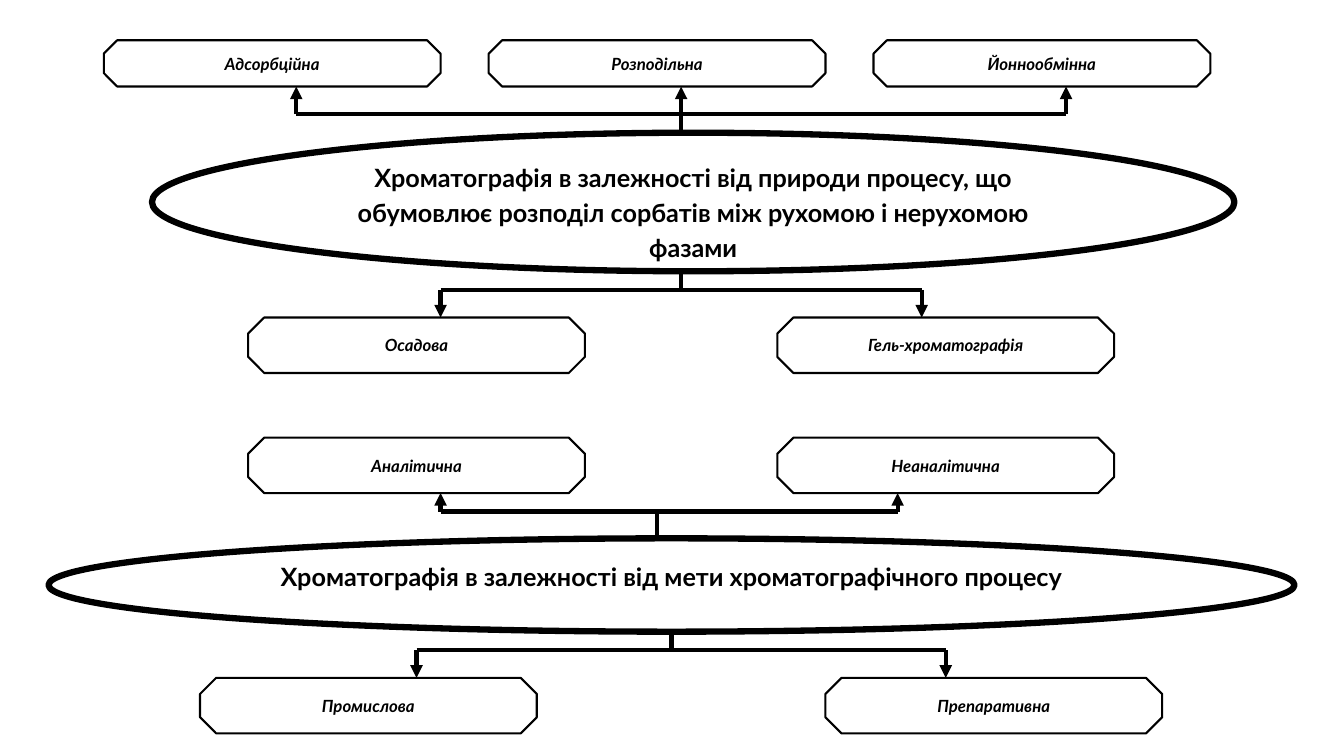
from lxml import etree
from pptx import Presentation
from pptx.dml.color import RGBColor
from pptx.enum.shapes import MSO_CONNECTOR, MSO_SHAPE
from pptx.enum.text import MSO_ANCHOR, PP_ALIGN
from pptx.oxml.ns import qn
from pptx.util import Inches, Pt

ELLIPSE, OCTAGON = MSO_SHAPE.OVAL, MSO_SHAPE.OCTAGON
STRAIGHT = MSO_CONNECTOR.STRAIGHT
TOP, MIDDLE = MSO_ANCHOR.TOP, MSO_ANCHOR.MIDDLE
CENTER = PP_ALIGN.CENTER
BLACK = RGBColor(0x00, 0x00, 0x00)
WHITE = RGBColor(0xFF, 0xFF, 0xFF)
FONT = "Lato"

LEFT, UP = 1.03, 0.4
BOX_COLS = 14
COL, ROW = 3.34 / BOX_COLS, 0.55 / 6

# (left, top, columns, rows) in grid units; kinds are (label, box column, arrow column)
TOPICS = [
    {
        "text": "Хроматографія в залежності від природи процесу, що "
                "обумовлює розподіл сорбатів між рухомою і нерухомою фазами",
        "oval": (2, 10, 45, 15),
        "branches": [
            {"stem": 24, "bus": 8, "top": 0, "rows": 5, "kinds": [
                ("Адсорбційна", 0, 8), ("Розподільна", 16, 24), ("Йоннообмінна", 32, 40)]},
            {"stem": 24, "bus": 27, "top": 30, "rows": 6, "kinds": [
                ("Осадова", 6, 14), ("Гель-хроматографія", 28, 34)]},
        ],
    },
    {
        "text": "Хроматографія в залежності від мети хроматографічного процесу",
        "oval": (-2.3, 53.9, 51.8, 10.1),
        "branches": [
            {"stem": 23, "bus": 51, "top": 43, "rows": 6, "kinds": [
                ("Аналітична", 6, 14), ("Неаналітична", 28, 33)]},
            {"stem": 23.6, "bus": 66, "top": 69, "rows": 6, "kinds": [
                ("Промислова", 4, 13), ("Препаративна", 30, 35)]},
        ],
    },
]


def x_at(col):
    return Inches(LEFT + col * COL)


def y_at(row):
    return Inches(UP + row * ROW)


def add_node(s, text, kind, place, size=12, italic=False, width=1.5,
             anchor=MIDDLE, spacing=1.0):
    col, row, cols, rows = place
    sp = s.shapes.add_shape(kind, x_at(col), y_at(row),
                            Inches(cols * COL), Inches(rows * ROW))
    sp.shadow.inherit = False
    sp.fill.solid()
    sp.fill.fore_color.rgb = WHITE
    sp.line.color.rgb = BLACK
    sp.line.width = Pt(width)
    tf = sp.text_frame
    tf.word_wrap = True
    tf.vertical_anchor = anchor
    p = tf.paragraphs[0]
    p.alignment = CENTER
    p.line_spacing = spacing
    r = p.add_run()
    r.text = text
    r.font.name = FONT
    r.font.size = Pt(size)
    r.font.bold = True
    r.font.italic = italic
    r.font.color.rgb = BLACK
    return sp


def add_line(s, start, end, arrow=False):
    c = s.shapes.add_connector(STRAIGHT, x_at(start[0]), y_at(start[1]),
                               x_at(end[0]), y_at(end[1]))
    c.line.color.rgb = BLACK
    c.line.width = Pt(3)
    if arrow:
        etree.SubElement(c.line._get_or_add_ln(), qn("a:tailEnd"), type="triangle")
    etree.SubElement(c._element.spPr, qn("a:effectLst"))


def add_branch(s, oval, stem, bus, top, rows, kinds):
    above = bus < oval[1]
    oval_edge = oval[1] if above else oval[1] + oval[3]
    box_edge = top + rows if above else top
    add_line(s, (stem, oval_edge), (stem, bus))
    add_line(s, (kinds[0][2], bus), (kinds[-1][2], bus))
    for label, col, arrow_col in kinds:
        add_line(s, (arrow_col, bus), (arrow_col, box_edge), arrow=True)
        sp = add_node(s, label, OCTAGON, (col, top, BOX_COLS, rows), italic=True)
        sp.adjustments[0] = 0.29


def main():
    prs = Presentation()
    prs.slide_width, prs.slide_height = Inches(13.33), Inches(7.5)
    s = prs.slides.add_slide(prs.slide_layouts[6])
    for topic in TOPICS:
        add_node(s, topic["text"], ELLIPSE, topic["oval"], size=18, width=4.5,
                 anchor=TOP, spacing=1.15)
        for branch in topic["branches"]:
            add_branch(s, topic["oval"], **branch)
    prs.save("out.pptx")


if __name__ == "__main__":
    main()
